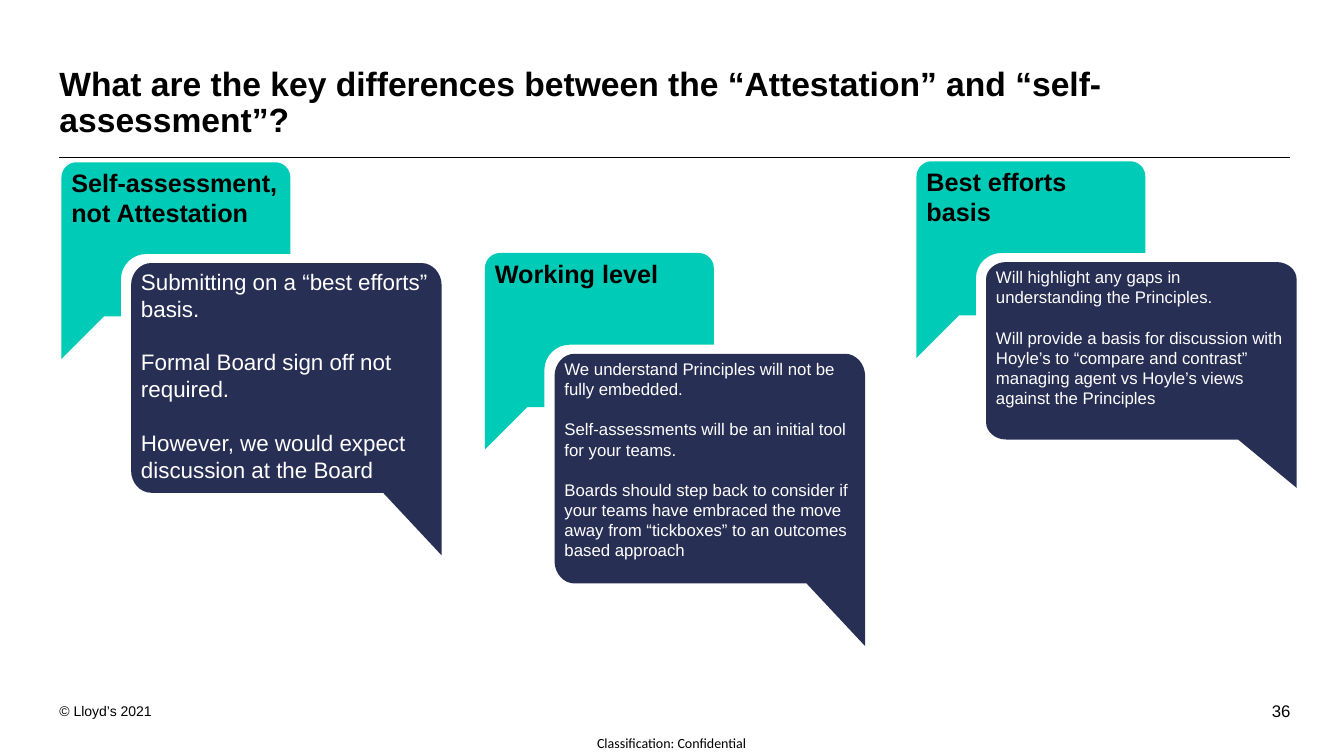
from lxml import etree
from pptx import Presentation
from pptx.dml.color import RGBColor
from pptx.enum import text as t
from pptx.oxml.ns import qn
from pptx.util import Inches, Pt

TEAL = RGBColor(0x00, 0xCB, 0xB6)
NAVY = RGBColor(0x28, 0x2F, 0x54)
BLACK = RGBColor(0, 0, 0)
WHITE = RGBColor(255, 255, 255)
LEFT, CENTER, RIGHT = t.PP_ALIGN.LEFT, t.PP_ALIGN.CENTER, t.PP_ALIGN.RIGHT
TOP, MIDDLE = t.MSO_ANCHOR.TOP, t.MSO_ANCHOR.MIDDLE
LINE_HEIGHT = 1.2  # one line of text, relative to the font size
ROUNDNESS = 0.55   # pull of a Bezier corner that makes a quarter ellipse

# left, top, heading, body height, body text size, body paragraphs
COLUMNS = [
    (0.61, 1.61, "Self-assessment, not Attestation", 2.9, 16, [
        "Submitting on a “best efforts” basis.",
        "Formal Board sign off not required.",
        "However, we would expect discussion at the Board"]),
    (4.81, 2.51, "Working level", 2.9, 12, [
        "We understand Principles will not be fully embedded.",
        "Self-assessments will be an initial tool for your teams.",
        "Boards should step back to consider if your teams have embraced the move "
        "away from “tickboxes” to an outcomes based approach"]),
    (9.09, 1.6, "Best efforts basis", 2.24, 12, [
        "Will highlight any gaps in understanding the Principles.",
        "Will provide a basis for discussion with Hoyle’s to “compare and contrast” "
        "managing agent vs Hoyle’s views against the Principles"]),
]


def write(frame, paragraphs, size, color, bold=False, align=LEFT, anchor=TOP,
          font="Arial", spacing=None):
    frame.word_wrap = True
    frame.vertical_anchor = anchor
    for i, words in enumerate(paragraphs):
        paragraph = frame.paragraphs[0] if i == 0 else frame.add_paragraph()
        paragraph.alignment = align
        paragraph.line_spacing = spacing
        if i:
            paragraph.space_before = Pt(size * LINE_HEIGHT)
        run = paragraph.add_run()
        run.text = words
        run.font.name, run.font.size, run.font.bold = font, Pt(size), bold
        run.font.color.rgb = color


def add_label(slide, box, words, size, pad=0, **style):
    frame = slide.shapes.add_textbox(*map(Inches, box)).text_frame
    frame.margin_left = frame.margin_right = 0
    frame.margin_top = frame.margin_bottom = Inches(pad)
    write(frame, [words], size, BLACK, **style)


def round_segment(segment, start, corner, end):
    """Turn a straight path segment into a curve that rounds off the corner."""
    segment.tag = qn("a:cubicBezTo")
    pulls = [[a + ROUNDNESS * (c - a) for a, c in zip(point, corner)]
             for point in (start, end)]
    for i, (x, y) in enumerate(pulls):
        control = etree.Element(qn("a:pt"), x=str(Inches(x)), y=str(Inches(y)))
        segment.insert(i, control)


def add_bubble(slide, left, top, outline, corners, fill):
    """corners maps the index of an outline point to the corner rounded before it."""
    points = [(Inches(left + x), Inches(top + y)) for x, y in outline]
    builder = slide.shapes.build_freeform(*points[0])
    builder.add_line_segments(points[1:], close=True)
    bubble = builder.convert_to_shape()
    segments = list(bubble._element.iter(qn("a:lnTo")))
    for i, corner in corners.items():
        round_segment(segments[i - 1], outline[i - 1], corner, outline[i])
    bubble.shadow.inherit = False
    bubble.fill.solid()
    bubble.fill.fore_color.rgb = fill
    bubble.line.fill.background()
    return bubble.text_frame


def add_heading_bubble(slide, left, top, heading):
    width, height, r = 2.27, 1.95, 0.15
    bottom, notch_x, notch_y = 1.53, 0.59, 0.91
    outline = [(width, notch_y), (width, r), (width - r, 0), (r, 0), (0, r),
               (0, height), (0.42, bottom), (notch_x, bottom),
               (notch_x, notch_y + 0.25), (notch_x + 0.25, notch_y)]
    corners = {2: (width, 0), 4: (0, 0), 9: (notch_x, notch_y)}
    frame = add_bubble(slide, left, top, outline, corners, TEAL)
    write(frame, [heading], 18, BLACK, bold=True)


def add_body_bubble(slide, left, top, height, size, paragraphs):
    width, rx, ry, bottom = 3.08, 0.2, height * 0.076, height * 0.786
    outline = [(width - rx, 0), (rx, 0), (0, ry), (0, bottom - ry), (rx, bottom),
               (2.5, bottom), (width, height), (width, ry), (width - rx, 0)]
    corners = {2: (0, 0), 4: (0, bottom), 8: (width, 0)}
    frame = add_bubble(slide, left, top, outline, corners, NAVY)
    write(frame, paragraphs, size, WHITE)


def add_column(slide, left, top, heading, height, size, paragraphs):
    add_heading_bubble(slide, left, top, heading)
    add_body_bubble(slide, left + 0.69, top + 1, height, size, paragraphs)


def add_header(slide, left, top, width):
    add_label(slide, (left, top, width, 0.89),
              "What are the key differences between the “Attestation” and “self-assessment”?",
              24, pad=0.08, bold=True, spacing=0.9)
    y = Inches(top + 0.97)
    rule = slide.shapes.add_connector(1, Inches(left), y, Inches(left + width), y)
    rule.line.color.rgb = BLACK
    rule.line.width = Pt(0.5)
    etree.SubElement(rule._element.spPr, qn("a:effectLst"))


def add_footer(slide, left, top, width):
    add_label(slide, (left, top + 0.06, 1.63, 0.17), "© Lloyd’s 2021", 10)
    add_label(slide, (left + width - 0.31, top, 0.32, 0.28), "36", 12,
              align=RIGHT, anchor=MIDDLE)
    add_label(slide, (5.75, top + 0.31, 1.82, 0.29), "Classification: Confidential", 10,
              align=CENTER, anchor=MIDDLE, font="Calibri")


def main():
    deck = Presentation()
    deck.slide_width, deck.slide_height = Inches(13.33), Inches(7.5)
    slide = deck.slides.add_slide(deck.slide_layouts[6])
    add_header(slide, 0.59, 0.59, 12.2)
    for column in COLUMNS:
        add_column(slide, *column)
    add_footer(slide, 0.59, 6.91, 12.2)
    deck.save("out.pptx")


if __name__ == "__main__":
    main()
